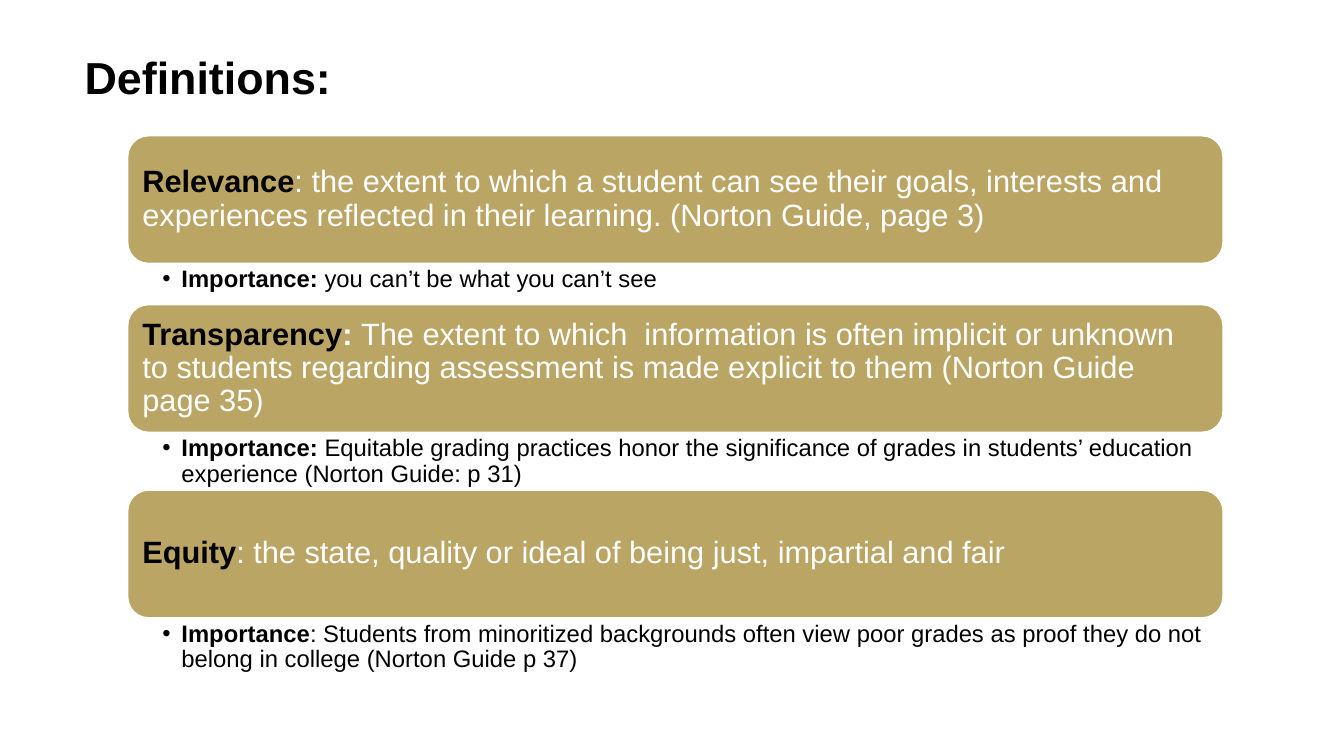
from dataclasses import dataclass

from lxml.etree import SubElement
from pptx import Presentation
from pptx.dml.color import RGBColor
from pptx.enum.shapes import MSO_SHAPE
from pptx.enum.text import MSO_ANCHOR, PP_ALIGN
from pptx.oxml.ns import qn
from pptx.util import Inches, Pt

WIDE, HIGH = Inches(13.333), Inches(7.5)
FONT = "Arial"
HUES = {"ink": "000000", "gold": "BAA564", "white": "FFFFFF"}
LEFT, SPAN = 9.45, 81.6
TOP, BAR = 17.87, 17.07


@dataclass
class Run:
    text: str
    bold: bool = False
    hue: str = "ink"


@dataclass
class Term:
    bar: list[Run]
    note: list[Run]
    drop: float


TERMS = [
    Term(
        [Run("Relevance", True),
         Run(": the extent to which a student can see their goals, interests and "
             "experiences reflected in their learning. (Norton Guide, page 3)", hue="white")],
        [Run("Importance:", True), Run(" you can’t be what you can’t see")],
        5.27,
    ),
    Term(
        [Run("Transparency", True), Run(": ", True, "white"),
         Run("The extent to which  information is often implicit or unknown to students "
             "regarding assessment is made explicit to them (Norton Guide page 35)", hue="white")],
        [Run("Importance: ", True),
         Run("Equitable grading practices honor the significance of grades in students’ "
             "education experience (Norton Guide: p 31)")],
        7.47,
    ),
    Term(
        [Run("Equity", True),
         Run(": the state, quality or ideal of being just, impartial and fair", hue="white")],
        [Run("Importance", True),
         Run(": Students from minoritized backgrounds often view poor grades as proof "
             "they do not belong in college (Norton Guide p 37)")],
        7.47,
    ),
]


def area(left: float, top: float, wide: float, high: float) -> tuple[int, ...]:
    return (int(WIDE * left / 100), int(HIGH * top / 100),
            int(WIDE * wide / 100), int(HIGH * high / 100))


def write(shape, runs: list[Run], size: float, pads: tuple[float, ...],
          anchor=MSO_ANCHOR.MIDDLE, dot: bool = False) -> None:
    frame = shape.text_frame
    frame.word_wrap = True
    frame.vertical_anchor = anchor
    (frame.margin_left, frame.margin_top,
     frame.margin_right, frame.margin_bottom) = map(Inches, pads)
    para = frame.paragraphs[0]
    para.alignment = PP_ALIGN.LEFT
    para.line_spacing = 0.9
    if dot:
        para.level = 1
        props = para._p.get_or_add_pPr()
        props.set("marL", str(Inches(0.19)))
        props.set("indent", str(-Inches(0.19)))
        SubElement(props, qn("a:buFont"), typeface=FONT)
        SubElement(props, qn("a:buChar"), char="•")
    for item in runs:
        run = para.add_run()
        run.text = item.text
        run.font.name = FONT
        run.font.size = Pt(size)
        run.font.bold = item.bold
        run.font.color.rgb = RGBColor.from_string(HUES[item.hue])


def draw(slide, term: Term, top: float) -> None:
    bar = slide.shapes.add_shape(MSO_SHAPE.ROUNDED_RECTANGLE, *area(LEFT, top, SPAN, BAR))
    bar.shadow.inherit = False
    bar.fill.solid()
    bar.fill.fore_color.rgb = RGBColor.from_string(HUES["gold"])
    bar.line.color.rgb = RGBColor.from_string(HUES["white"])
    bar.line.width = Pt(2)
    write(bar, term.bar, 22, (0.09, 0.09, 0.09, 0.09))
    note = slide.shapes.add_textbox(*area(LEFT, top + BAR, SPAN, term.drop))
    write(note, term.note, 17, (0.35, 0.03, 0.17, 0.03), MSO_ANCHOR.TOP, True)


def main() -> None:
    deck = Presentation()
    deck.slide_width, deck.slide_height = WIDE, HIGH
    slide = deck.slides.add_slide(deck.slide_layouts[6])
    title = slide.shapes.add_textbox(*area(6.3, 4, 87.45, 13.2))
    write(title, [Run("Definitions:", True)], 32, (0, 0.05, 0, 0.05))
    top = TOP
    for term in TERMS:
        draw(slide, term, top)
        top += BAR + term.drop
    deck.save("out.pptx")


if __name__ == "__main__":
    main()
